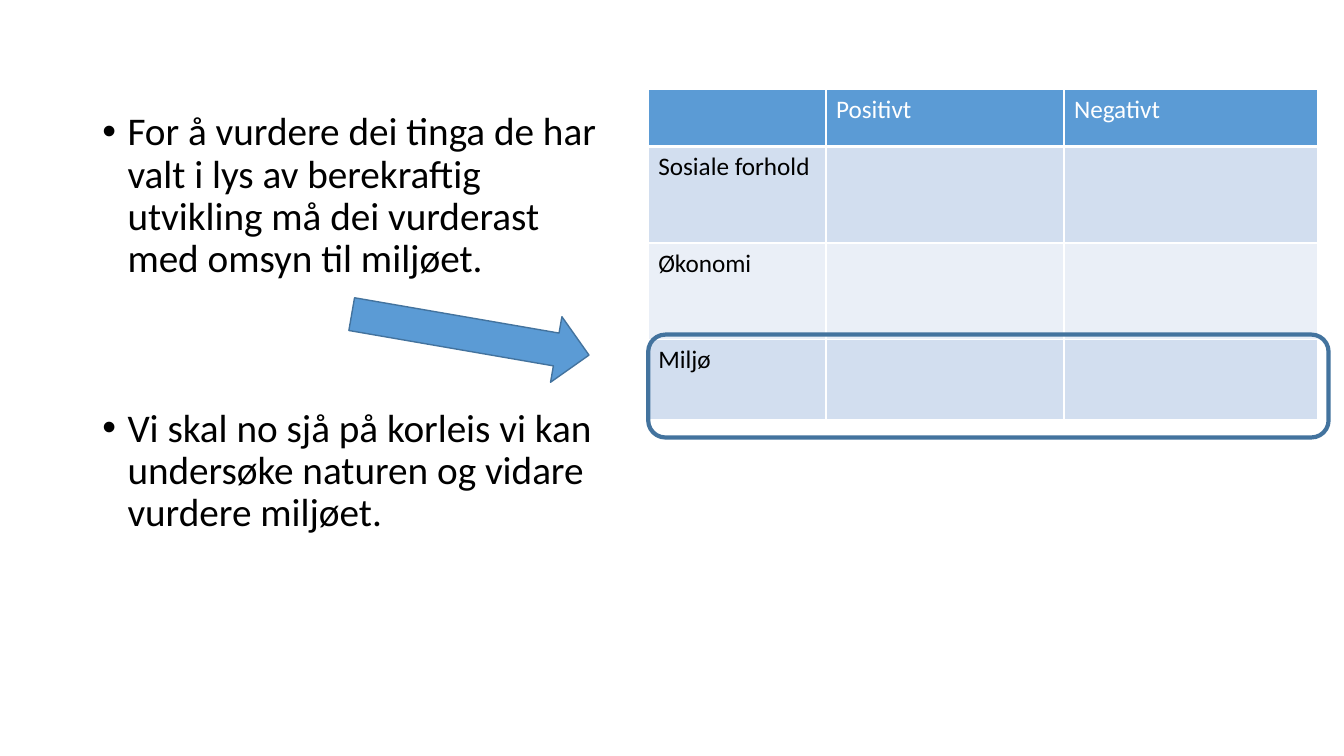
import pptx
import pptx.util
import pptx.dml.color
import pptx.enum.shapes
import pptx.oxml
import pptx.oxml.ns
from pptx.util import Pt

# Content
FONT = "Calibri"
BULLETS = [  # text, space before
    ("For å vurdere dei tinga de har valt i lys av berekraftig utvikling "
     "må dei vurderast med omsyn til miljøet.", 10),
    ("Vi skal no sjå på korleis vi kan undersøke naturen og vidare "
     "vurdere miljøet.", 90.5),
]
TABLE_ROWS = [
    ("", "Positivt", "Negativt"),
    ("Sosiale forhold", "", ""),
    ("Økonomi", "", ""),
    ("Miljø", "", ""),
]
COLUMN_WIDTHS = [127, 170, 181]
ROW_HEIGHTS = [41, 69, 69, 57]
TABLE_LEFT, TABLE_TOP = 463, 63.6
BLUE, DARK_BLUE, WHITE, BLACK = "5B9BD5", "43739E", "FFFFFF", "000000"
BANDS = ["D2DEEF", "EAEFF7"]


def color(hex_string):
    return pptx.dml.color.RGBColor.from_string(hex_string)


def add_run(paragraph, text, size, text_color):
    run = paragraph.add_run()
    run.text = text
    run.font.name = FONT
    run.font.size = Pt(size)
    run.font.bold = False
    run.font.color.rgb = color(text_color)


def add_bullet(paragraph):
    properties = paragraph._p.get_or_add_pPr()
    properties.set("marL", str(Pt(18)))
    properties.set("indent", str(Pt(-18)))
    for tag, name, value in (("buFont", "typeface", "Arial"), ("buChar", "char", "•")):
        element = pptx.oxml.parse_xml(
            f'<a:{tag} {pptx.oxml.ns.nsdecls("a")} {name}="{value}"/>')
        properties.append(element)


def set_borders(cell, bottom_width):
    properties = cell._tc.get_or_add_tcPr()
    widths = {"lnL": 1, "lnR": 1, "lnT": 1, "lnB": bottom_width}
    for position, (tag, width) in enumerate(widths.items()):
        border = pptx.oxml.parse_xml(
            f'<a:{tag} {pptx.oxml.ns.nsdecls("a")} w="{Pt(width)}"><a:solidFill>'
            f'<a:srgbClr val="{WHITE}"/></a:solidFill></a:{tag}>')
        properties.insert(position, border)


def add_outlined_shape(kind, left, top, width, height, line_width):
    shape = slide.shapes.add_shape(kind, Pt(left), Pt(top), Pt(width), Pt(height))
    shape.shadow.inherit = False
    shape.line.color.rgb = color(DARK_BLUE)
    shape.line.width = Pt(line_width)
    return shape


presentation = pptx.Presentation()
presentation.slide_width, presentation.slide_height = Pt(960), Pt(540)
slide = presentation.slides.add_slide(presentation.slide_layouts[6])

# Bulleted text
text_box = slide.shapes.add_textbox(Pt(66), Pt(76.5), Pt(367.5), Pt(410))
text_frame = text_box.text_frame
text_frame.word_wrap = True
for index, (text, space_before) in enumerate(BULLETS):
    paragraph = text_frame.add_paragraph() if index else text_frame.paragraphs[0]
    paragraph.line_spacing = 0.9
    paragraph.space_before = Pt(space_before)
    add_bullet(paragraph)
    add_run(paragraph, text, 28, BLACK)

# Assessment table
table = slide.shapes.add_table(
    len(TABLE_ROWS), len(COLUMN_WIDTHS), Pt(TABLE_LEFT), Pt(TABLE_TOP),
    Pt(sum(COLUMN_WIDTHS)), Pt(sum(ROW_HEIGHTS))).table
for column, width in zip(table.columns, COLUMN_WIDTHS):
    column.width = Pt(width)
for row_index, texts in enumerate(TABLE_ROWS):
    table.rows[row_index].height = Pt(ROW_HEIGHTS[row_index])
    is_header = row_index == 0
    for column_index, text in enumerate(texts):
        cell = table.cell(row_index, column_index)
        cell.fill.solid()
        cell.fill.fore_color.rgb = color(BLUE if is_header else BANDS[(row_index - 1) % 2])
        set_borders(cell, 3 if is_header else 1)
        if text:
            add_run(cell.text_frame.paragraphs[0], text, 18, WHITE if is_header else BLACK)

# Frame around the environment row
frame = add_outlined_shape(
    pptx.enum.shapes.MSO_SHAPE.ROUNDED_RECTANGLE, TABLE_LEFT, 239, 486, 73.5, 3)
frame.fill.background()

# Arrow from the text to the framed row
arrow = add_outlined_shape(
    pptx.enum.shapes.MSO_SHAPE.RIGHT_ARROW, 250, 215.3, 172, 47.5, 1)
arrow.fill.solid()
arrow.fill.fore_color.rgb = color(BLUE)
arrow.rotation = 9.8

presentation.save("out.pptx")
